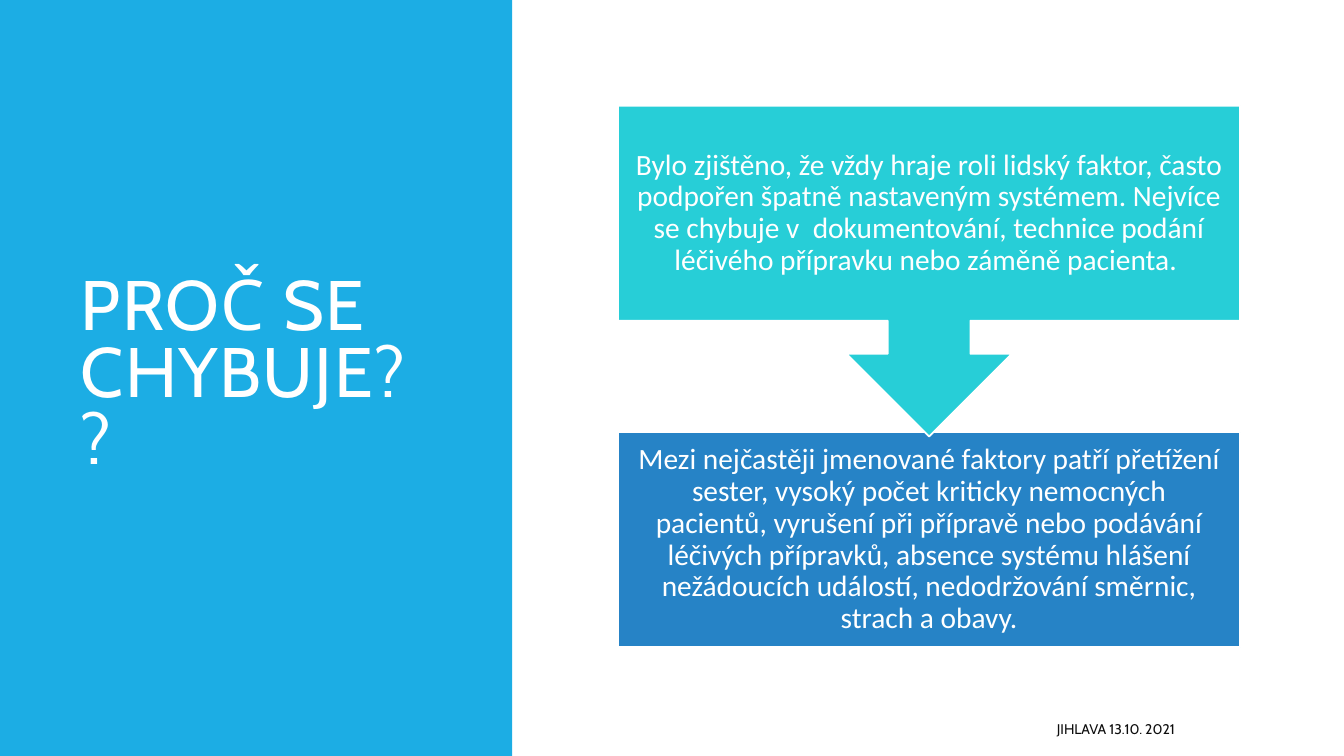
from pptx import Presentation
from pptx.dml.color import RGBColor
from pptx.enum.shapes import MSO_SHAPE
from pptx.enum.text import MSO_ANCHOR, MSO_AUTO_SIZE, PP_ALIGN
from pptx.util import Inches, Pt

WHITE = "FFFFFF"


def color(hex_code):
    return RGBColor.from_string(hex_code)


def write(frame, text, *, size, font, ink=WHITE, align=PP_ALIGN.LEFT,
          leading=1.0, after=0, tracking=0, inset=None):
    frame.word_wrap = True
    frame.auto_size = MSO_AUTO_SIZE.NONE
    frame.vertical_anchor = MSO_ANCHOR.MIDDLE
    if inset is not None:
        frame.margin_left = frame.margin_right = Inches(inset)
        frame.margin_top = frame.margin_bottom = Inches(inset)
    paragraph = frame.paragraphs[0]
    paragraph.alignment = align
    paragraph.line_spacing = leading
    paragraph.space_before = Pt(0)
    paragraph.space_after = Pt(after)
    run = paragraph.add_run()
    run.text = text
    run.font.size = Pt(size)
    run.font.name = font
    run.font.color.rgb = color(ink)
    if tracking:
        run.font._element.set("spc", str(tracking * 100))


class SlideBuilder:
    heading_font = "Cabin"
    body_font = "Calibri"

    def __init__(self, deck):
        self.slide = deck.slides.add_slide(deck.slide_layouts[5])

    def panel(self, kind, box, fill, outline=None):
        panel = self.slide.shapes.add_shape(kind, *map(Inches, box))
        panel.shadow.inherit = False
        panel.fill.solid()
        panel.fill.fore_color.rgb = color(fill)
        if outline:
            panel.line.color.rgb = color(outline)
            panel.line.width = Pt(1.25)
        else:
            panel.line.fill.background()
        return panel

    def sidebar(self, box, fill):
        sidebar = self.panel(MSO_SHAPE.RECTANGLE, box, fill)
        self.slide.shapes._spTree.insert(2, sidebar._element)

    def title(self, text, box):
        title = self.slide.shapes.title
        title.left, title.top, title.width, title.height = map(Inches, box)
        write(title.text_frame, text, size=50, font=self.heading_font,
              leading=0.8, tracking=1)

    def step(self, kind, box, fill, text):
        step = self.panel(kind, box, fill, outline=WHITE)
        write(step.text_frame, text, size=21, font=self.body_font,
              align=PP_ALIGN.CENTER, leading=0.9, after=7, inset=0.16)

    def footer(self, text, box):
        footer = self.slide.shapes.add_textbox(*map(Inches, box))
        write(footer.text_frame, text, size=10, font=self.heading_font,
              ink="0D0D0D", align=PP_ALIGN.RIGHT, after=6)


def main():
    deck = Presentation()
    deck.slide_width, deck.slide_height = Inches(13.33), Inches(7.5)
    page = SlideBuilder(deck)
    page.sidebar((0, 0, 5.08, 7.5), "1CADE4")
    page.title("PROČ SE CHYBUJE??", (0.7, 0.7, 3.74, 6.09))
    page.footer("JIHLAVA 13.10. 2021", (5.3, 7.08, 6.45, 0.3))
    page.step(
        MSO_SHAPE.RECTANGLE, (6.13, 4.29, 6.17, 2.13), "2683C6",
        "Mezi nejčastěji jmenované faktory patří přetížení sester, vysoký "
        "počet kriticky nemocných pacientů, vyrušení při přípravě nebo "
        "podávání léčivých přípravků, absence systému hlášení nežádoucích "
        "událostí, nedodržování směrnic, strach a obavy.")
    page.step(
        MSO_SHAPE.DOWN_ARROW_CALLOUT, (6.13, 1.05, 6.17, 3.28), "27CED7",
        "Bylo zjištěno, že vždy hraje roli lidský faktor, často podpořen "
        "špatně nastaveným systémem. Nejvíce se chybuje v  dokumentování, "
        "technice podání léčivého přípravku nebo záměně pacienta. ")
    deck.save("out.pptx")


if __name__ == "__main__":
    main()
